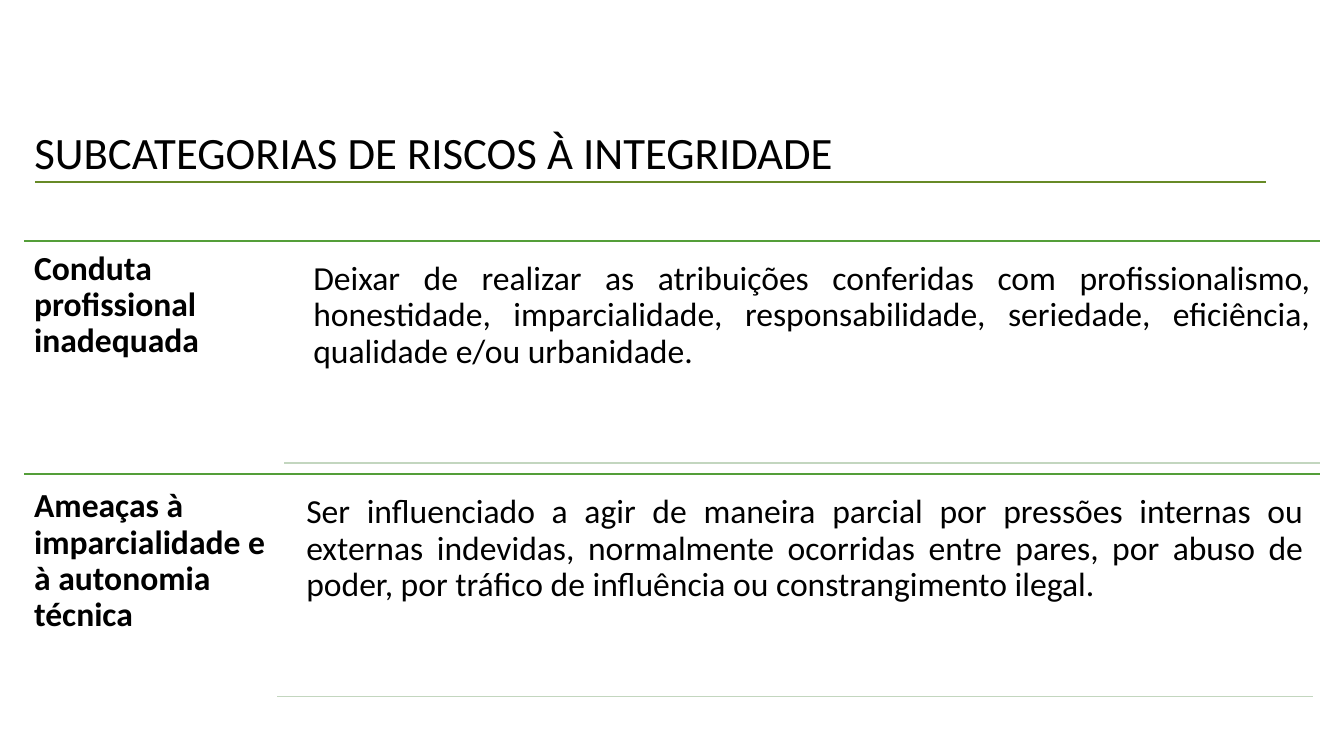
import pptx
import pptx.dml.color
import pptx.enum.shapes
import pptx.enum.text
import pptx.oxml.ns
import pptx.util
from lxml import etree

Pt = pptx.util.Pt
ALIGN = pptx.enum.text.PP_ALIGN
GREEN, PALE_GREEN, OLIVE, BLACK = "549E39", "C3D6BF", "678A26", "000000"
LEFT, RIGHT = 17.3, 943.2

# rule y, name box (top, width, height), description box (left, top)
ROWS = [
    (172.1, (172.1, 185, 167), (216.7, 179.6),
     "Conduta profissional inadequada",
     "Deixar de realizar as atribuições conferidas com profissionalismo, "
     "honestidade, imparcialidade, responsabilidade, seriedade, eficiência, "
     "qualidade e/ou urbanidade."),
    (338.6, (342, 180, 155.5), (211.7, 346.3),
     "Ameaças à imparcialidade e à autonomia técnica",
     "Ser influenciado a agir de maneira parcial por pressões internas ou "
     "externas indevidas, normalmente ocorridas entre pares, por abuso de "
     "poder, por tráfico de influência ou constrangimento ilegal."),
]
DESC_W, DESC_H = 726.5, 151.2
RULE_INDENT, RULE_W = 13.7, 740.2


def rgb(color):
    return pptx.dml.color.RGBColor.from_string(color)


def add_rule(s, x1, x2, y, color, width=1):
    line = s.shapes.add_connector(
        pptx.enum.shapes.MSO_CONNECTOR.STRAIGHT, Pt(x1), Pt(y), Pt(x2), Pt(y))
    line.line.color.rgb = rgb(color)
    line.line.width = Pt(width)
    etree.SubElement(line._element.spPr, pptx.oxml.ns.qn("a:effectLst"))


def format_text(sp, text, size, bold=False, align=ALIGN.LEFT, spacing=1.0):
    tf = sp.text_frame
    tf.text = text
    tf.word_wrap = True
    tf.auto_size = pptx.enum.text.MSO_AUTO_SIZE.NONE
    tf.vertical_anchor = pptx.enum.text.MSO_ANCHOR.TOP
    p = tf.paragraphs[0]
    p.alignment = align
    p.line_spacing = spacing
    p.space_before = Pt(0)
    font = p.runs[0].font
    font.name = "Calibri"
    font.size = Pt(size)
    font.bold = bold
    font.color.rgb = rgb(BLACK)


def add_text(s, x, y, w, h, text, bold=False, align=ALIGN.LEFT):
    sp = s.shapes.add_textbox(Pt(x), Pt(y), Pt(w), Pt(h))
    format_text(sp, text, 24, bold, align, 0.9)
    tf = sp.text_frame
    tf.margin_left = tf.margin_right = Pt(7.2)
    tf.margin_top = tf.margin_bottom = Pt(7.2)


def add_title(s, text):
    sp = s.shapes.title
    sp.left, sp.top, sp.width, sp.height = Pt(LEFT), Pt(85.7), Pt(879), Pt(46)
    format_text(sp, text, 32)


def add_row(s, rule_y, name_box, desc_pos, name, desc):
    top, width, height = name_box
    x, y = desc_pos
    add_rule(s, LEFT, RIGHT, rule_y, GREEN)
    add_text(s, LEFT, top, width, height, name, bold=True)
    add_text(s, x, y, DESC_W, DESC_H, desc, align=ALIGN.JUSTIFY)
    rule_x = x - RULE_INDENT
    add_rule(s, rule_x, rule_x + RULE_W, y + DESC_H, PALE_GREEN)


def main():
    prs = pptx.Presentation()
    prs.slide_width, prs.slide_height = Pt(960), Pt(540)
    s = prs.slides.add_slide(prs.slide_layouts[5])
    add_title(s, "SUBCATEGORIAS DE RISCOS À INTEGRIDADE")
    add_rule(s, 25.2, 904.3, 130.3, OLIVE, 1.5)
    for row in ROWS:
        add_row(s, *row)
    prs.save("out.pptx")


if __name__ == "__main__":
    main()
